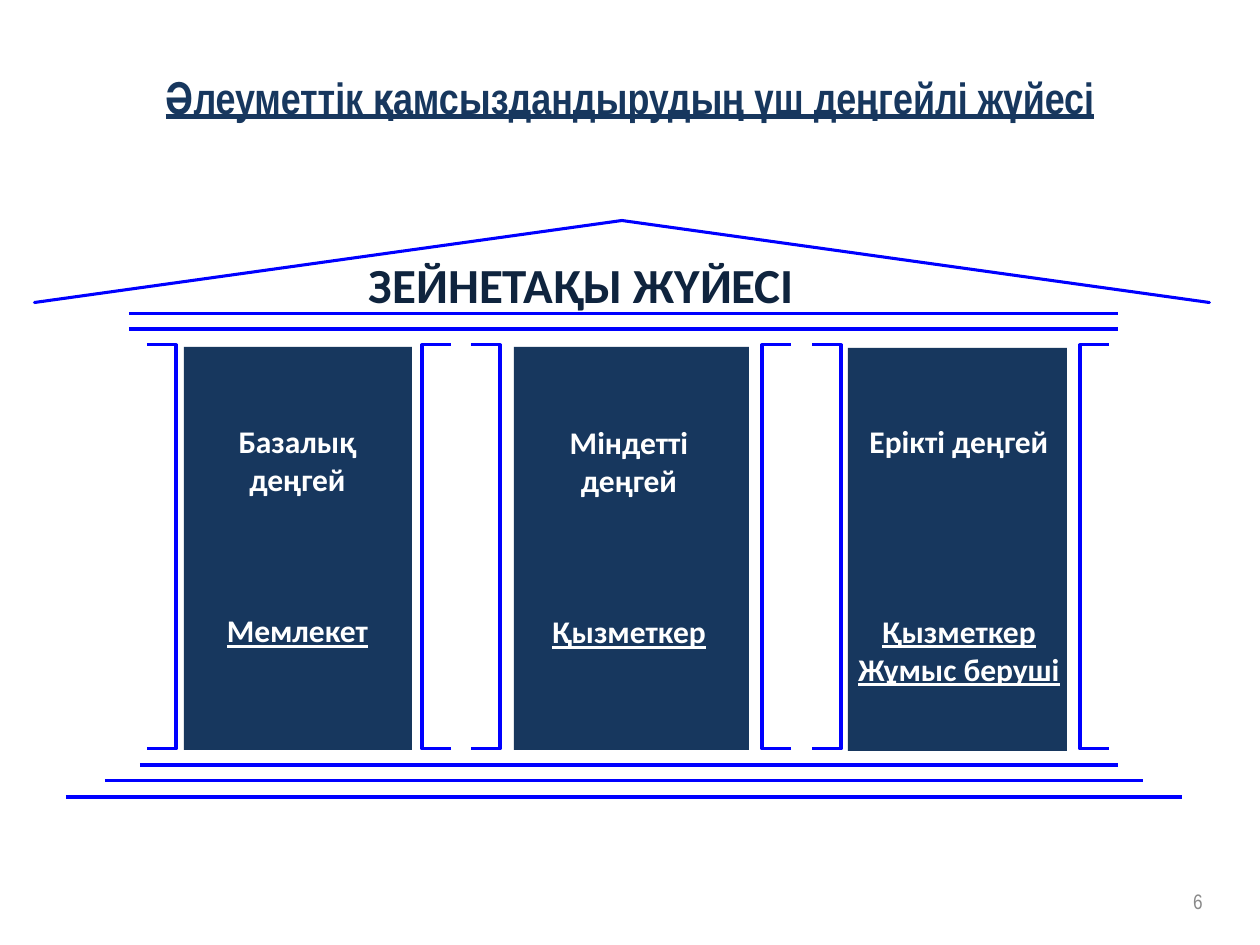
from dataclasses import dataclass

import lxml.etree
import pptx
import pptx.dml.color
import pptx.enum.shapes
import pptx.enum.text
import pptx.util

SCALE = 914400 // 126  # EMU in one px
KIND = pptx.enum.shapes.MSO_SHAPE
ALIGN = pptx.enum.text.PP_ALIGN
ANCHOR = pptx.enum.text.MSO_ANCHOR
DRAW = "http://schemas.openxmlformats.org/drawingml/2006/main"


@dataclass(frozen=True)
class Theme:
    blue: str = "0000FF"
    navy: str = "17375E"
    dark: str = "0F243E"
    white: str = "FFFFFF"
    gray: str = "898989"
    head: str = "Arial Narrow"
    body: str = "Calibri"
    title: int = 25
    roof: int = 28
    level: int = 18
    page: int = 12
    line: float = 1.75


THEME = Theme()

# Left, top, width of each pillar; left, top, width of its text;
# level name, gap in points, payers
PILLARS = [
    ((184, 347, 228), (203, 422, 189), "Базалық деңгей", 65, ["Мемлекет"]),
    ((514, 347, 235), (520, 423, 218), "Міндетті деңгей", 65, ["Қызметкер"]),
    ((848, 348, 219), (842, 422, 234), "Ерікті деңгей", 87,
     ["Қызметкер", "Жұмыс беруші"]),
]
TALL = 403
TRIMS = [(147, 422), (471, 762), (812, 1080)]  # bracket lefts per pillar
BEAMS = [(129, 1118, 314), (129, 1118, 329)]
STEPS = [(140, 1118, 765), (105, 1143, 781), (66, 1182, 797)]


def px(*nums):
    return [pptx.util.Emu(num * SCALE) for num in nums]


def color(code):
    return pptx.dml.color.RGBColor.from_string(code)


def stroke(item):
    item.line.color.rgb = color(THEME.blue)
    item.line.width = pptx.util.Pt(THEME.line)


def add_form(slide, kind, box, fill=None, edge=False):
    form = slide.shapes.add_shape(kind, *px(*box))
    form.shadow.inherit = False
    if fill:
        form.fill.solid()
        form.fill.fore_color.rgb = color(fill)
    else:
        form.fill.background()
    if edge:
        stroke(form)
    else:
        form.line.fill.background()
    return form


def add_line(slide, left, right, top):
    line = slide.shapes.add_connector(
        pptx.enum.shapes.MSO_CONNECTOR.STRAIGHT, *px(left, top, right, top))
    stroke(line)
    lxml.etree.SubElement(line._element.spPr, f"{{{DRAW}}}effectLst")


def add_text(slide, box, rows, size, ink, font=THEME.body, bold=True,
             under=(), gaps=None, align=ALIGN.CENTER, anchor=ANCHOR.TOP,
             wrap=True, inset=True):
    """Each row is a paragraph; under holds the rows that are underlined."""
    frame = slide.shapes.add_textbox(*px(*box)).text_frame
    frame.word_wrap = wrap
    frame.vertical_anchor = anchor
    if not inset:
        frame.margin_left = frame.margin_right = 0
        frame.margin_top = frame.margin_bottom = 0
    for num, row in enumerate(rows):
        para = frame.paragraphs[0] if num == 0 else frame.add_paragraph()
        para.alignment = align
        para.space_before = pptx.util.Pt((gaps or {}).get(num, 0))
        run = para.add_run()
        run.text = row
        run.font.name = font
        run.font.size = pptx.util.Pt(size)
        run.font.bold = bold
        run.font.underline = num in under
        run.font.color.rgb = color(ink)


def add_roof(slide):
    # A chevron with no depth, turned to point up
    wide, high, mid_x, mid_y = 1175, 82, 622, 261
    box = (mid_x - high // 2, mid_y - wide // 2, high, wide)
    roof = add_form(slide, KIND.CHEVRON, box, THEME.blue, edge=True)
    roof.adjustments[0] = 1
    roof.rotation = 270


def add_trim(slide, lefts):
    for kind, left in zip((KIND.RIGHT_BRACKET, KIND.LEFT_BRACKET), lefts):
        trim = add_form(slide, kind, (left, 345, 29, 404), edge=True)
        trim.adjustments[0] = 0


def add_pillar(slide, body, label, name, gap, payers):
    add_form(slide, KIND.RECTANGLE, (*body, TALL), THEME.navy)
    add_text(slide, (*label, 270), [name, *payers], THEME.level, THEME.white,
             under=range(1, len(payers) + 1), gaps={1: gap}, inset=False)


def main():
    deck = pptx.Presentation()
    deck.slide_width, deck.slide_height = px(1260, 945)
    slide = deck.slides.add_slide(deck.slide_layouts[6])

    # Title
    add_text(slide, (63, 38, 1134, 117),
             ["Әлеуметтік қамсыздандырудың үш деңгейлі жүйесі"],
             THEME.title, THEME.navy, font=THEME.head, under=[0],
             anchor=ANCHOR.MIDDLE)

    # Temple roof, beams and steps
    add_roof(slide)
    for line in BEAMS + STEPS:
        add_line(slide, *line)
    add_text(slide, (369, 255, 430, 59), ["ЗЕЙНЕТАҚЫ ЖҮЙЕСІ"], THEME.roof,
             THEME.dark, align=ALIGN.LEFT, wrap=False, inset=False)

    # Pillars with their brackets
    for lefts, pillar in zip(TRIMS, PILLARS):
        add_trim(slide, lefts)
        add_pillar(slide, *pillar)

    # Page number
    add_text(slide, (921, 876, 294, 50), ["6"], THEME.page, THEME.gray,
             font=THEME.head, bold=False, align=ALIGN.RIGHT,
             anchor=ANCHOR.MIDDLE)

    deck.save("out.pptx")


if __name__ == "__main__":
    main()
